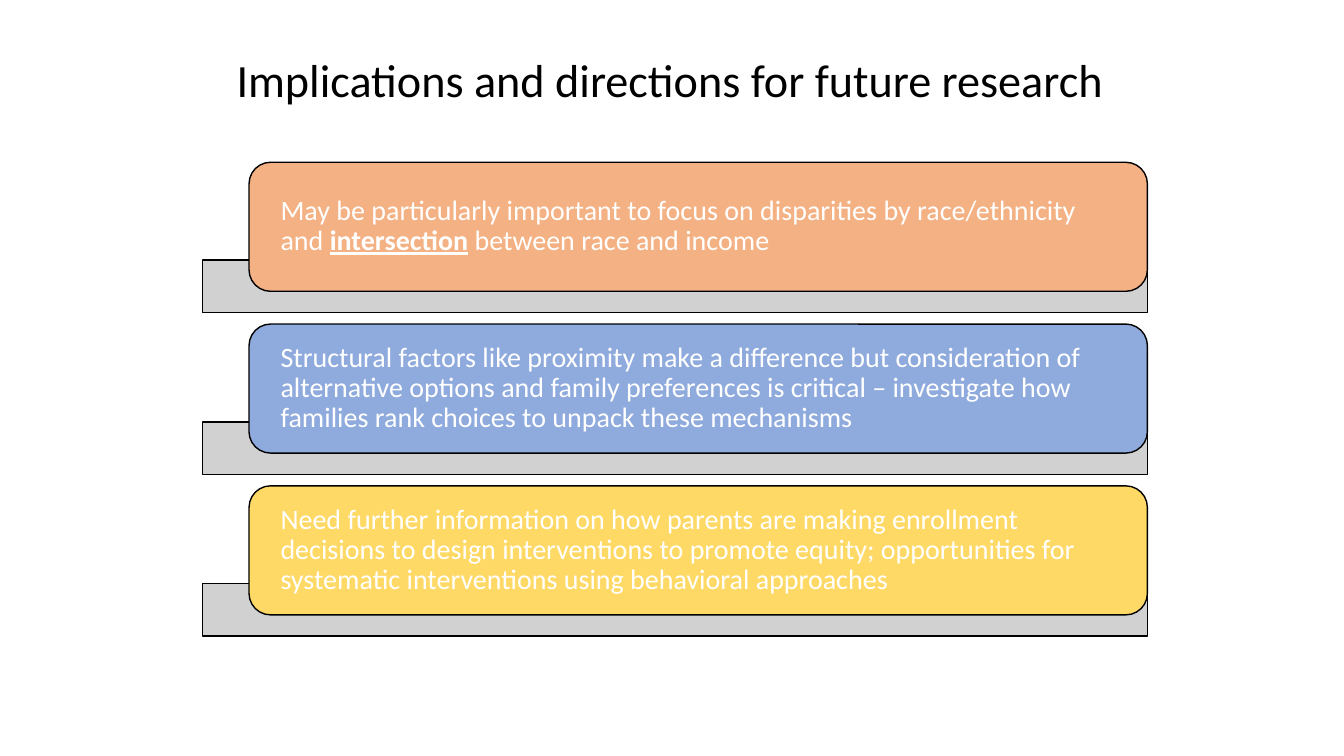
"""Build the slide on implications and directions for future research."""
from dataclasses import dataclass

import lxml.etree
import pptx
import pptx.dml.color
import pptx.enum.shapes
import pptx.enum.text
import pptx.oxml.ns
import pptx.shapes.autoshape
import pptx.slide
import pptx.util

Inches = pptx.util.Inches
Pt = pptx.util.Pt
RGBColor = pptx.dml.color.RGBColor
MSO_SHAPE = pptx.enum.shapes.MSO_SHAPE
PP_ALIGN = pptx.enum.text.PP_ALIGN
MSO_ANCHOR = pptx.enum.text.MSO_ANCHOR

BLACK = RGBColor(0x00, 0x00, 0x00)
WHITE = RGBColor(0xFF, 0xFF, 0xFF)
GRAY = RGBColor(0xCC, 0xCC, 0xCC)
ORANGE = RGBColor(0xF4, 0xB1, 0x83)
BLUE = RGBColor(0x8F, 0xAA, 0xDC)
YELLOW = RGBColor(0xFF, 0xD9, 0x66)

FONT = "Calibri"
LEFT = 2.01
CARD_LEFT = 2.47
RIGHT = 11.38
CARD_TOP = 1.61
CARD_HEIGHT = 1.28
BAR_OFFSET = 0.97
BAR_HEIGHT = 0.52
PITCH = 1.605


@dataclass(frozen=True)
class Card:
    color: RGBColor
    before: str
    emphasis: str = ""
    after: str = ""


CARDS = [
    Card(
        ORANGE,
        "May be particularly important to focus on disparities by race/ethnicity and ",
        "intersection",
        " between race and income",
    ),
    Card(
        BLUE,
        "Structural factors like proximity make a difference but consideration of "
        "alternative options and family preferences is critical – investigate how "
        "families rank choices to unpack these mechanisms",
    ),
    Card(
        YELLOW,
        "Need further information on how parents are making enrollment decisions "
        "to design interventions to promote equity; opportunities for systematic "
        "interventions using behavioral approaches",
    ),
]


def add_title(s: pptx.slide.Slide, text: str) -> None:
    sp = s.shapes.title
    sp.left, sp.top = Inches(LEFT), Inches(0.4)
    sp.width, sp.height = Inches(9.27), Inches(0.84)
    tf = sp.text_frame
    tf.text = text
    tf.word_wrap = True
    tf.auto_size = pptx.enum.text.MSO_AUTO_SIZE.NONE
    tf.vertical_anchor = MSO_ANCHOR.MIDDLE
    p = tf.paragraphs[0]
    p.alignment = PP_ALIGN.CENTER
    p.line_spacing = 0.9
    p.font.name, p.font.size = FONT, Pt(33)
    p.font.color.rgb = BLACK


def add_block(
    s: pptx.slide.Slide,
    kind: MSO_SHAPE,
    left: float,
    top: float,
    height: float,
    color: RGBColor,
) -> pptx.shapes.autoshape.Shape:
    sp = s.shapes.add_shape(
        kind, Inches(left), Inches(top), Inches(RIGHT - left), Inches(height)
    )
    sp.shadow.inherit = False
    sp.fill.solid()
    sp.fill.fore_color.rgb = color
    sp.line.color.rgb = BLACK
    sp.line.width = Pt(1)
    return sp


def set_alpha(sp: pptx.shapes.autoshape.Shape, percent: int) -> None:
    qn = pptx.oxml.ns.qn
    clr = sp.fill._xPr.find(qn("a:solidFill")).find(qn("a:srgbClr"))
    lxml.etree.SubElement(clr, qn("a:alpha")).set("val", str(percent * 1000))


def add_card(s: pptx.slide.Slide, card: Card, top: float) -> None:
    bar = add_block(s, MSO_SHAPE.RECTANGLE, LEFT, top + BAR_OFFSET, BAR_HEIGHT, GRAY)
    set_alpha(bar, 90)
    sp = add_block(
        s, MSO_SHAPE.ROUNDED_RECTANGLE, CARD_LEFT, top, CARD_HEIGHT, card.color
    )
    tf = sp.text_frame
    tf.word_wrap = True
    tf.vertical_anchor = MSO_ANCHOR.MIDDLE
    tf.margin_left = tf.margin_right = Inches(0.25)
    tf.margin_top = tf.margin_bottom = 0
    p = tf.paragraphs[0]
    p.alignment = PP_ALIGN.LEFT
    p.line_spacing = 0.9
    p.font.name, p.font.size = FONT, Pt(20)
    p.font.color.rgb = WHITE
    p.add_run().text = card.before
    if card.emphasis:
        r = p.add_run()
        r.text = card.emphasis
        r.font.bold = r.font.underline = True
        p.add_run().text = card.after


def main() -> None:
    prs = pptx.Presentation()
    prs.slide_width, prs.slide_height = Inches(13.33), Inches(7.5)
    s = prs.slides.add_slide(prs.slide_layouts.get_by_name("Title Only"))
    add_title(s, "Implications and directions for future research")
    for i, card in enumerate(CARDS):
        add_card(s, card, CARD_TOP + i * PITCH)
    prs.save("out.pptx")


if __name__ == "__main__":
    main()
